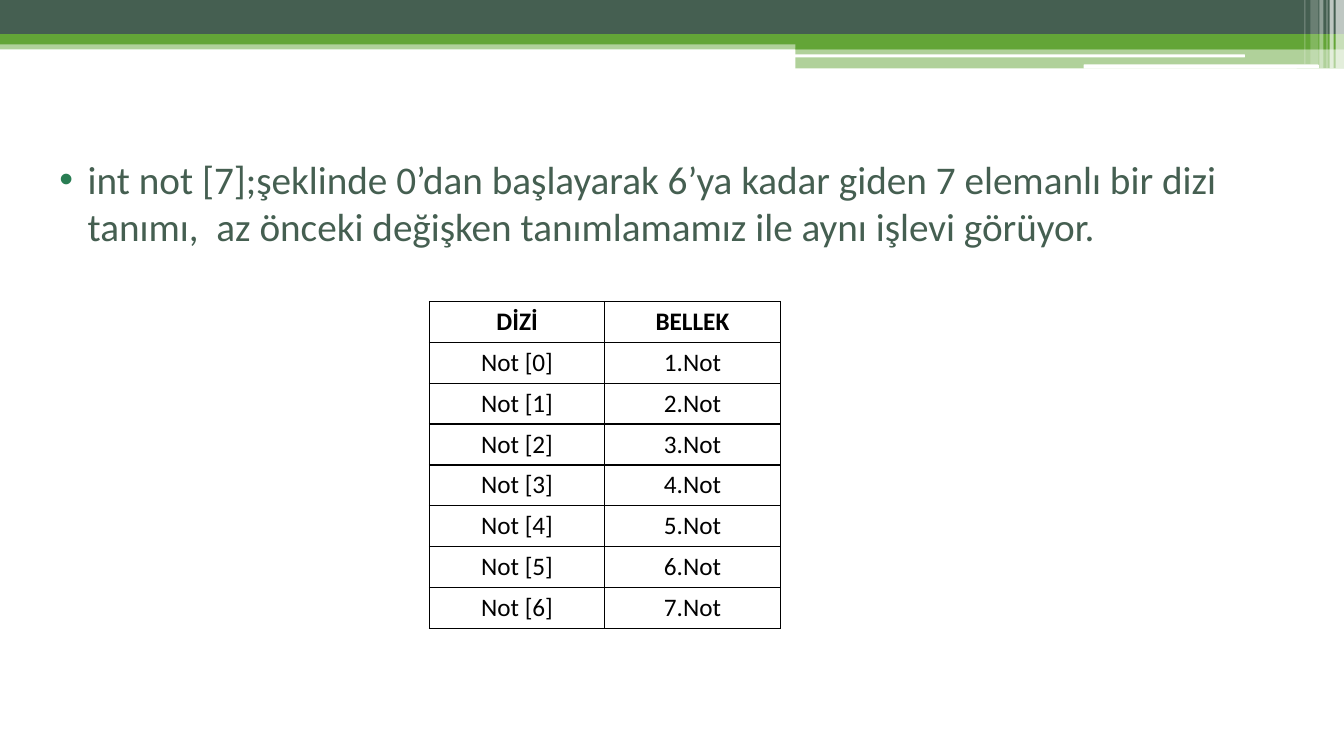
from lxml import etree
from pptx import Presentation
from pptx.dml.color import RGBColor
from pptx.enum.shapes import MSO_SHAPE
from pptx.enum.text import MSO_ANCHOR, MSO_AUTO_SIZE, PP_ALIGN
from pptx.oxml.ns import qn
from pptx.util import Inches, Pt

RECT, ROUND = MSO_SHAPE.RECTANGLE, MSO_SHAPE.ROUNDED_RECTANGLE
TOP, NO_FIT, CENTER = MSO_ANCHOR.TOP, MSO_AUTO_SIZE.NONE, PP_ALIGN.CENTER
COLS, ROWS = 40, 30
DARK, GREEN, WHITE, BLACK, MINT = "455F51", "63A537", "FFFFFF", "000000", "297D53"

BANDS = [
    (RECT, (0, 1.6, 40, 0.36), GREEN, 50),
    (RECT, (0, 0, 40, 1.36), DARK, 100),
    (RECT, (0, 1.36, 40, 0.4), GREEN, 100),
    (RECT, (23.67, 1.56, 16.33, 0.4), GREEN, 100),
    (RECT, (23.67, 1.92, 16.33, 0.8), GREEN, 50),
    (ROUND, (23.64, 2.16, 13.41, 0.12), WHITE, 100),
    (ROUND, (32.25, 2.56, 7, 0.16), WHITE, 100),
]
STRIPES = [
    (39.75, 0.25, 2.72, 65),
    (39.57, 0.12, 2.72, 65),
    (39.48, 0.03, 2.72, 60),
    (39.27, 0.12, 2.72, 40),
    (39, 0.24, 2.56, 20),
    (38.82, 0.03, 2.56, 30),
]
NOTE = (
    "int not [7];şeklinde 0’dan başlayarak 6’ya kadar giden 7 elemanlı bir dizi "
    "tanımı,  az önceki değişken tanımlamamız ile aynı işlevi görüyor."
)


def paint(code):
    """Turn a hex string into a colour."""
    return RGBColor.from_string(code)


def assign(item, values):
    """Set each attribute in the dict of values."""
    for name, value in values.items():
        setattr(item, name, value)


class Deck:
    """Hold the style and the current slide."""

    def __init__(self):
        """Open a slide that has a body and no title."""
        self.prs = Presentation()
        assign(self.prs, {"slide_width": Inches(13.33), "slide_height": Inches(7.5)})
        self.col = self.prs.slide_width / COLS
        self.row = self.prs.slide_height / ROWS
        self.slide = self.prs.slides.add_slide(self.prs.slide_layouts[1])
        title = self.slide.shapes.title.element
        title.getparent().remove(title)

    def place(self, left, top, width, height):
        """Turn grid units into slide lengths."""
        return (round(left * self.col), round(top * self.row),
                round(width * self.col), round(height * self.row))

    def style(self, font, size, color, bold=False):
        """Give a font the deck's look."""
        assign(font, {"name": "Calibri", "size": Pt(size), "bold": bold})
        font.color.rgb = paint(color)

    def band(self, kind, box, color, alpha):
        """Draw a plain bar with the given opacity."""
        bar = self.slide.shapes.add_shape(kind, *self.place(*box))
        bar.shadow.inherit = False
        bar.line.fill.background()
        bar.fill.solid()
        bar.fill.fore_color.rgb = paint(color)
        if alpha < 100:
            tint = next(bar.element.iter(qn("a:srgbClr")))
            etree.SubElement(tint, qn("a:alpha"), val=str(alpha * 1000))

    def body(self, box, text):
        """Fill the body with one bulleted paragraph."""
        hold = self.slide.placeholders[1]
        assign(hold, dict(zip(("left", "top", "width", "height"), self.place(*box))))
        assign(hold.text_frame, {"word_wrap": True, "auto_size": NO_FIT,
                                 "vertical_anchor": TOP})
        para = hold.text_frame.paragraphs[0]
        run = para.add_run()
        run.text = text
        self.style(run.font, 28, DARK)
        para.space_before = Pt(3)
        props = para._p.get_or_add_pPr()
        props.set("marL", str(Inches(0.28)))
        props.set("indent", str(Inches(-0.28)))
        tint = etree.SubElement(props, qn("a:buClr"))
        etree.SubElement(tint, qn("a:srgbClr"), val=MINT)
        etree.SubElement(props, qn("a:buFont"), typeface="Arial")
        etree.SubElement(props, qn("a:buChar"), char="•")

    def border(self, cell):
        """Rule all four sides of a cell."""
        props = cell._tc.get_or_add_tcPr()
        for side in "LRTB":
            line = etree.SubElement(props, qn(f"a:ln{side}"), w=str(Pt(1)))
            fill = etree.SubElement(line, qn("a:solidFill"))
            etree.SubElement(fill, qn("a:srgbClr"), val=BLACK)

    def table(self, left, top, wide, high, data):
        """Draw a ruled table with a bold first row."""
        rows, cols = len(data), len(data[0])
        box = self.place(left, top, wide * cols, high * rows)
        grid = self.slide.shapes.add_table(rows, cols, *box).table
        assign(grid, {"first_row": False, "horz_banding": False})
        for i, line in enumerate(data):
            for j, text in enumerate(line):
                cell = grid.cell(i, j)
                self.border(cell)
                cell.fill.background()
                para = cell.text_frame.paragraphs[0]
                para.alignment = CENTER
                run = para.add_run()
                run.text = text
                self.style(run.font, 18, BLACK, i == 0)


def main():
    """Build and save the slide."""
    deck = Deck()
    for band in BANDS:
        deck.band(*band)
    for left, width, height, alpha in STRIPES:
        deck.band(RECT, (left, 0, width, height), WHITE, alpha)
    deck.body((1.47, 5.96, 36, 18.92), NOTE)
    cells = [(f"Not [{i}]", f"{i + 1}.Not") for i in range(7)]
    deck.table(12.78, 11.96, 5.22, 1.62, [("DİZİ", "BELLEK")] + cells)
    deck.prs.save("out.pptx")


if __name__ == "__main__":
    main()
